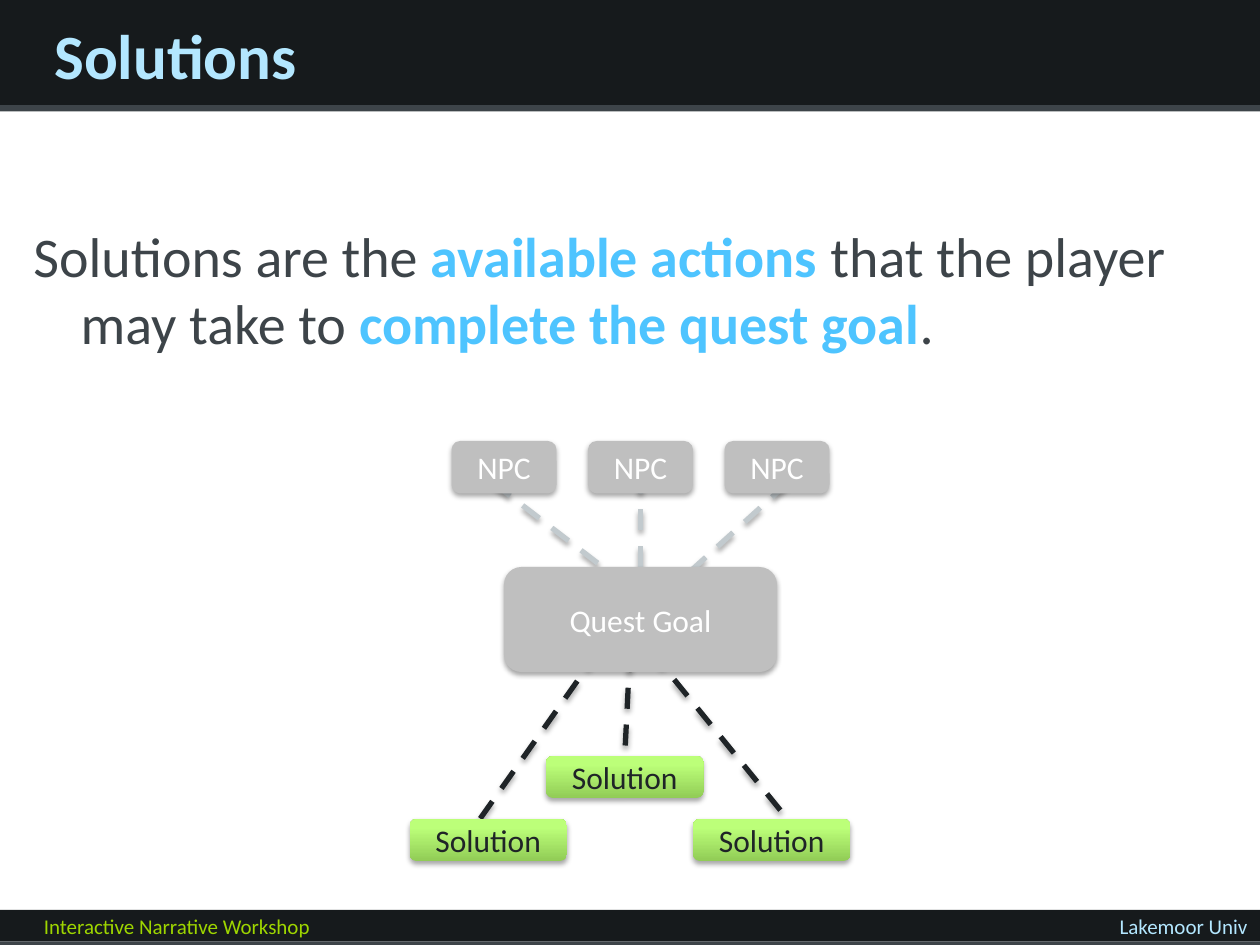
from dataclasses import dataclass

from pptx import Presentation
from pptx.dml.color import RGBColor
from pptx.enum.dml import MSO_LINE
from pptx.enum.shapes import MSO_CONNECTOR, MSO_SHAPE
from pptx.enum.text import MSO_ANCHOR, PP_ALIGN
from pptx.oxml import parse_xml
from pptx.oxml.ns import nsdecls
from pptx.util import Pt


@dataclass(frozen=True)
class Theme:
    font: str = "Calibri"
    bar: str = "161A1C"
    rule: str = "3D4449"
    body: str = "3D4449"
    pale_blue: str = "B3E7FF"
    highlight: str = "4EC4FF"
    lime: str = "9ED600"
    faded: str = "BFBFBF"
    faded_link: str = "C2CACE"
    ink: str = "1F2427"
    white: str = "FFFFFF"
    green_low: str = "91CC56"
    green_high: str = "BCFF79"
    title_size: int = 36
    body_size: int = 32
    node_size: int = 18
    footer_size: int = 12


THEME = Theme()
SLIDE_W, SLIDE_H = 720, 540
RULE_H = 3.6


def rgb(color):
    return RGBColor.from_string(color)


def write_runs(paragraph, size, runs):
    """Add (text, colour, bold) runs to a paragraph."""
    for text, color, bold in runs:
        run = paragraph.add_run()
        run.text = text
        run.font.name = THEME.font
        run.font.size = Pt(size)
        run.font.bold = bold
        run.font.color.rgb = rgb(color)


def add_text(slide, left, top, width, height, size, runs,
             align=PP_ALIGN.LEFT, anchor=MSO_ANCHOR.TOP):
    frame = slide.shapes.add_textbox(
        Pt(left), Pt(top), Pt(width), Pt(height)).text_frame
    frame.word_wrap = True
    frame.vertical_anchor = anchor
    paragraph = frame.paragraphs[0]
    paragraph.alignment = align
    write_runs(paragraph, size, runs)
    return paragraph


def add_bar(slide, left, top, width, height, color):
    bar = slide.shapes.add_shape(
        MSO_SHAPE.RECTANGLE, Pt(left), Pt(top), Pt(width), Pt(height))
    bar.shadow.inherit = False
    bar.fill.solid()
    bar.fill.fore_color.rgb = rgb(color)
    bar.line.fill.background()


def add_soft_shadow(shape_properties):
    """Append a downward shadow; the line must already be set."""
    shape_properties.append(parse_xml(
        f'<a:effectLst {nsdecls("a")}>'
        f'<a:outerShdw blurRad="{Pt(3.1)}" dist="{Pt(1.8)}" dir="5400000" rotWithShape="0">'
        '<a:srgbClr val="000000"><a:alpha val="35000"/></a:srgbClr>'
        '</a:outerShdw></a:effectLst>'))


def add_link(slide, start, end, color):
    link = slide.shapes.add_connector(
        MSO_CONNECTOR.STRAIGHT, *(Pt(value) for value in (*start, *end)))
    link.line.color.rgb = rgb(color)
    link.line.width = Pt(3)
    link.line.dash_style = MSO_LINE.DASH
    add_soft_shadow(link.element.spPr)


def add_node(slide, left, top, width, height, label, color):
    node = slide.shapes.add_shape(
        MSO_SHAPE.ROUNDED_RECTANGLE, Pt(left), Pt(top), Pt(width), Pt(height))
    node.line.fill.background()
    add_soft_shadow(node.element.spPr)
    node.text_frame.vertical_anchor = MSO_ANCHOR.MIDDLE
    paragraph = node.text_frame.paragraphs[0]
    paragraph.alignment = PP_ALIGN.CENTER
    write_runs(paragraph, THEME.node_size, [(label, color, False)])
    return node


def add_faded_node(slide, left, top, width, height, label):
    node = add_node(slide, left, top, width, height, label, THEME.white)
    node.fill.solid()
    node.fill.fore_color.rgb = rgb(THEME.faded)


def add_solution_node(slide, left, top):
    node = add_node(slide, left, top, 90, 24, "Solution", THEME.ink)
    node.fill.gradient()
    node.fill.gradient_angle = 90
    shades = ((0, THEME.green_low), (0.8, THEME.green_high))
    for stop, (position, color) in zip(node.fill.gradient_stops, shades):
        stop.position = position
        stop.color.rgb = rgb(color)


def add_header(slide, left, top, width, height):
    add_bar(slide, left, top, width, height, THEME.bar)
    add_bar(slide, left, top + height, width, RULE_H, THEME.rule)
    add_text(slide, left + 24, top, 648, height + 2.6, THEME.title_size,
             [("Solutions", THEME.pale_blue, True)], anchor=MSO_ANCHOR.MIDDLE)


def add_footer(slide, left, top, width, height):
    add_bar(slide, left, top, width, height, THEME.bar)
    add_bar(slide, left, top + height, width, RULE_H, THEME.rule)
    text_top, text_h = top - 1.6, 21.6
    add_text(slide, left + 18, text_top, 282, text_h, THEME.footer_size,
             [("Interactive Narrative Workshop", THEME.lime, False)])
    add_text(slide, left + width - 240, text_top, 240, text_h, THEME.footer_size,
             [("Lakemoor Univ", THEME.pale_blue, False)], align=PP_ALIGN.RIGHT)


def add_quest_diagram(slide, left, top):
    """NPCs above the quest goal, its solutions below."""
    def at(x, y):
        return left + x, top + y

    solution_links = (((108, 120), (36, 222)),
                      ((138, 120), (216, 216)),
                      ((126, 120), (123, 180)))
    npc_links = (((132, 18), (132, 72)),
                 ((216, 24), (150, 84)),
                 ((48, 24), (126, 84)))
    for links, color in ((solution_links, THEME.ink), (npc_links, THEME.faded_link)):
        for start, end in links:
            add_link(slide, at(*start), at(*end), color)

    add_faded_node(slide, *at(54, 72), 156, 60, "Quest Goal")
    for column in range(3):
        add_faded_node(slide, *at(24 + 78 * column, 0), 60, 30, "NPC")
    for corner in ((0, 216), (78, 180), (162, 216)):
        add_solution_node(slide, *at(*corner))


def add_definition(slide, left, top, width, height):
    definition = add_text(slide, left, top, width, height, THEME.body_size, [
        ("Solutions are the ", THEME.body, False),
        ("available actions ", THEME.highlight, True),
        ("that the player may take to ", THEME.body, False),
        ("complete the quest goal", THEME.highlight, True),
        (".", THEME.body, False)])
    hanging = definition._p.get_or_add_pPr()
    hanging.set("marL", str(Pt(27)))
    hanging.set("indent", str(Pt(-27)))


def main():
    deck = Presentation()
    deck.slide_width, deck.slide_height = Pt(SLIDE_W), Pt(SLIDE_H)
    slide = deck.slides.add_slide(deck.slide_layouts[6])
    add_header(slide, 0, 0, SLIDE_W, 60)
    add_footer(slide, 0, 520, SLIDE_W, 18)
    add_quest_diagram(slide, 234, 252)
    add_definition(slide, 12, 123, 696, 353)
    deck.save("out.pptx")


if __name__ == "__main__":
    main()
